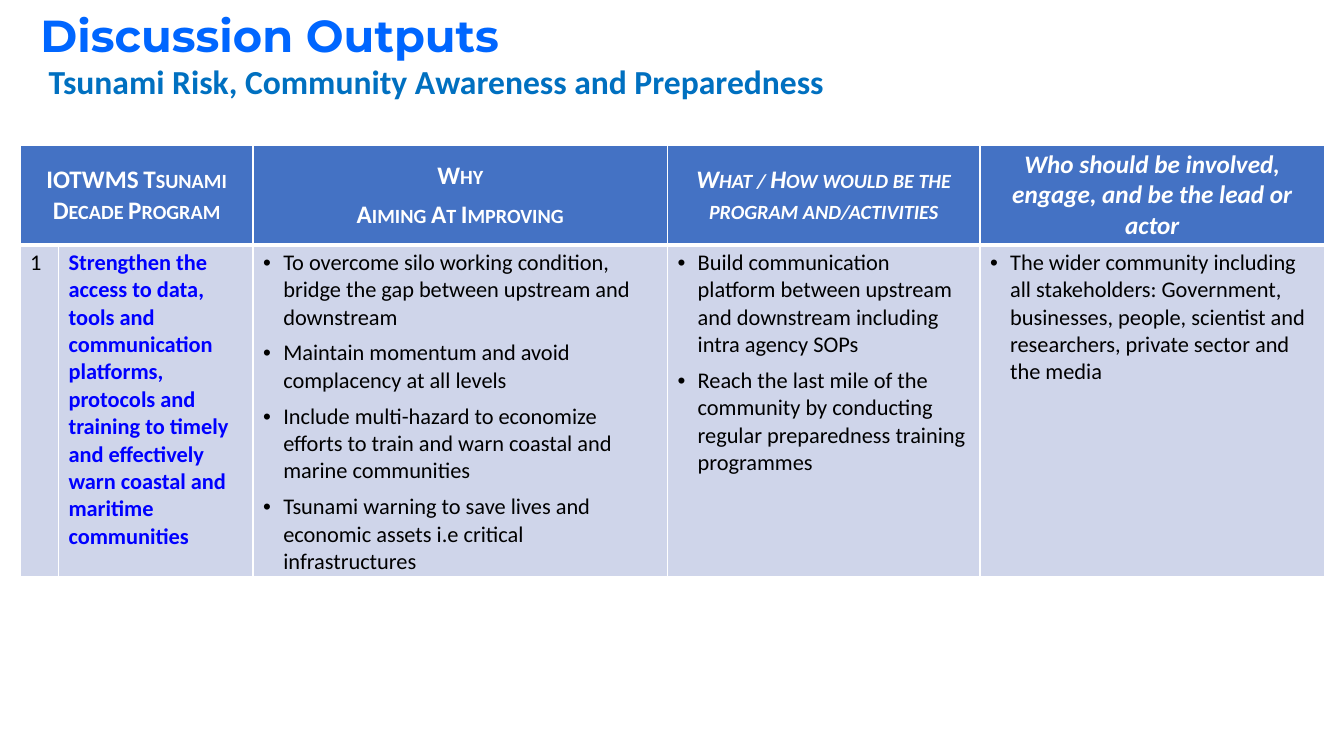
from lxml import etree
from pptx import Presentation
from pptx.dml.color import RGBColor
from pptx.enum.text import MSO_ANCHOR, PP_ALIGN
from pptx.oxml.ns import qn
from pptx.util import Pt

LEFT, CENTER = PP_ALIGN.LEFT, PP_ALIGN.CENTER
TOP, MIDDLE = MSO_ANCHOR.TOP, MSO_ANCHOR.MIDDLE

WHITE = RGBColor(0xFF, 0xFF, 0xFF)
BLACK = RGBColor(0x00, 0x00, 0x00)
TITLE_BLUE = RGBColor(0x00, 0x66, 0xFF)
SUBTITLE_BLUE = RGBColor(0x00, 0x70, 0xC0)
PROGRAM_BLUE = RGBColor(0x00, 0x00, 0xFF)
HEADER_FILL = RGBColor(0x44, 0x72, 0xC4)
BODY_FILL = RGBColor(0xCF, 0xD5, 0xEA)

TITLE = "Discussion Outputs"
SUBTITLE = "Tsunami Risk, Community Awareness and Preparedness"

# Header cells: column, paragraphs, italic, small caps
HEADERS = [
    (0, ["IOTWMS Tsunami Decade Program"], False, True),
    (2, ["Why", "Aiming At Improving"], False, True),
    (3, ["What / How would be the program and/activities"], True, True),
    (4, ["Who should be involved, engage, and be the lead or actor"], True, False),
]
NUMBER = "1"
PROGRAM = ("Strengthen the access to data, tools and communication platforms, protocols "
           "and training to timely and effectively warn coastal and maritime communities")
BULLET_COLUMNS = [
    ["To overcome silo working condition, bridge the gap between upstream and downstream",
     "Maintain momentum and avoid complacency at all levels",
     "Include multi-hazard to economize efforts to train and warn coastal and marine communities",
     "Tsunami warning to save lives and economic assets i.e critical infrastructures"],
    ["Build communication platform between upstream and downstream including intra agency SOPs",
     "Reach the last mile of the community by conducting regular preparedness training programmes"],
    ["The wider community including all stakeholders: Government, businesses, people, "
     "scientist and researchers, private sector and the media"],
]

COLUMN_WIDTHS = [27.4, 139, 296, 223.2, 246.2]
ROW_HEIGHTS = [71, 237]
TABLE_LEFT, TABLE_TOP = 14.4, 103.9
BULLET_INDENT = 14.4
PARAGRAPH_GAP = 6

TITLE_FONT = dict(name="Montserrat", size=Pt(32), bold=True)
SUBTITLE_FONT = dict(name="Calibri", size=Pt(24), bold=True)
HEADER_FONT = dict(name="Calibri", size=Pt(18), bold=True)
BODY_FONT = dict(name="Calibri", size=Pt(16), bold=False, italic=False)


def write(frame, lines, font, color, align=LEFT, bullets=False, small_caps=False):
    frame.word_wrap = True
    for index, line in enumerate(lines):
        para = frame.paragraphs[0] if index == 0 else frame.add_paragraph()
        para.alignment = align
        para.space_before = Pt(PARAGRAPH_GAP if index else 0)
        para.space_after = Pt(0)
        if bullets:
            properties = para._p.get_or_add_pPr()
            properties.set("marL", str(Pt(BULLET_INDENT)))
            properties.set("indent", str(-Pt(BULLET_INDENT)))
            etree.SubElement(properties, qn("a:buFont"), typeface="Arial")
            etree.SubElement(properties, qn("a:buChar"), char="•")
        span = para.add_run()
        span.text = line
        for key, value in font.items():
            setattr(span.font, key, value)
        span.font.color.rgb = color
        if small_caps:
            span._r.get_or_add_rPr().set("cap", "small")


def style_cell(cell, fill, anchor, margin_top, top_line, bottom_line):
    properties = cell._tc.get_or_add_tcPr()
    for side, width in zip("LRTB", (1, 1, top_line, bottom_line)):
        line = etree.SubElement(properties, qn(f"a:ln{side}"), w=str(Pt(width)))
        solid = etree.SubElement(line, qn("a:solidFill"))
        etree.SubElement(solid, qn("a:srgbClr"), val=str(WHITE))
    cell.fill.solid()
    cell.fill.fore_color.rgb = fill
    cell.vertical_anchor = anchor
    cell.margin_top, cell.margin_bottom = Pt(margin_top), Pt(0)


def place(shape, left, top, width, height):
    shape.left, shape.top = Pt(left), Pt(top)
    shape.width, shape.height = Pt(width), Pt(height)


deck = Presentation()
deck.slide_width, deck.slide_height = Pt(960), Pt(540)
page = deck.slides.add_slide(deck.slide_layouts[5])

title = page.shapes.title
place(title, 21.6, 0, 888.5, 54)
title.text_frame.vertical_anchor = MIDDLE
write(title.text_frame, [TITLE], TITLE_FONT, TITLE_BLUE)
title.text_frame.paragraphs[0].line_spacing = 0.9

subtitle = page.shapes.add_textbox(Pt(21.6), Pt(40.3), Pt(580.3), Pt(36))
write(subtitle.text_frame, [SUBTITLE], SUBTITLE_FONT, SUBTITLE_BLUE, CENTER)

table = page.shapes.add_table(
    len(ROW_HEIGHTS), len(COLUMN_WIDTHS), Pt(TABLE_LEFT), Pt(TABLE_TOP),
    Pt(sum(COLUMN_WIDTHS)), Pt(sum(ROW_HEIGHTS))).table
for column, width in zip(table.columns, COLUMN_WIDTHS):
    column.width = Pt(width)
for row, height in zip(table.rows, ROW_HEIGHTS):
    row.height = Pt(height)
for index in range(len(COLUMN_WIDTHS)):
    style_cell(table.cell(0, index), HEADER_FILL, MIDDLE, 0, 1, 3)
    style_cell(table.cell(1, index), BODY_FILL, TOP, 3, 3, 1)
table.cell(0, 0).merge(table.cell(0, 1))

for index, lines, italic, small_caps in HEADERS:
    write(table.cell(0, index).text_frame, lines, dict(HEADER_FONT, italic=italic),
          WHITE, CENTER, small_caps=small_caps)
write(table.cell(1, 0).text_frame, [NUMBER], BODY_FONT, BLACK)
write(table.cell(1, 1).text_frame, [PROGRAM], dict(BODY_FONT, bold=True), PROGRAM_BLUE)
for index, lines in enumerate(BULLET_COLUMNS, start=2):
    write(table.cell(1, index).text_frame, lines, BODY_FONT, BLACK, bullets=True)

deck.save("out.pptx")
